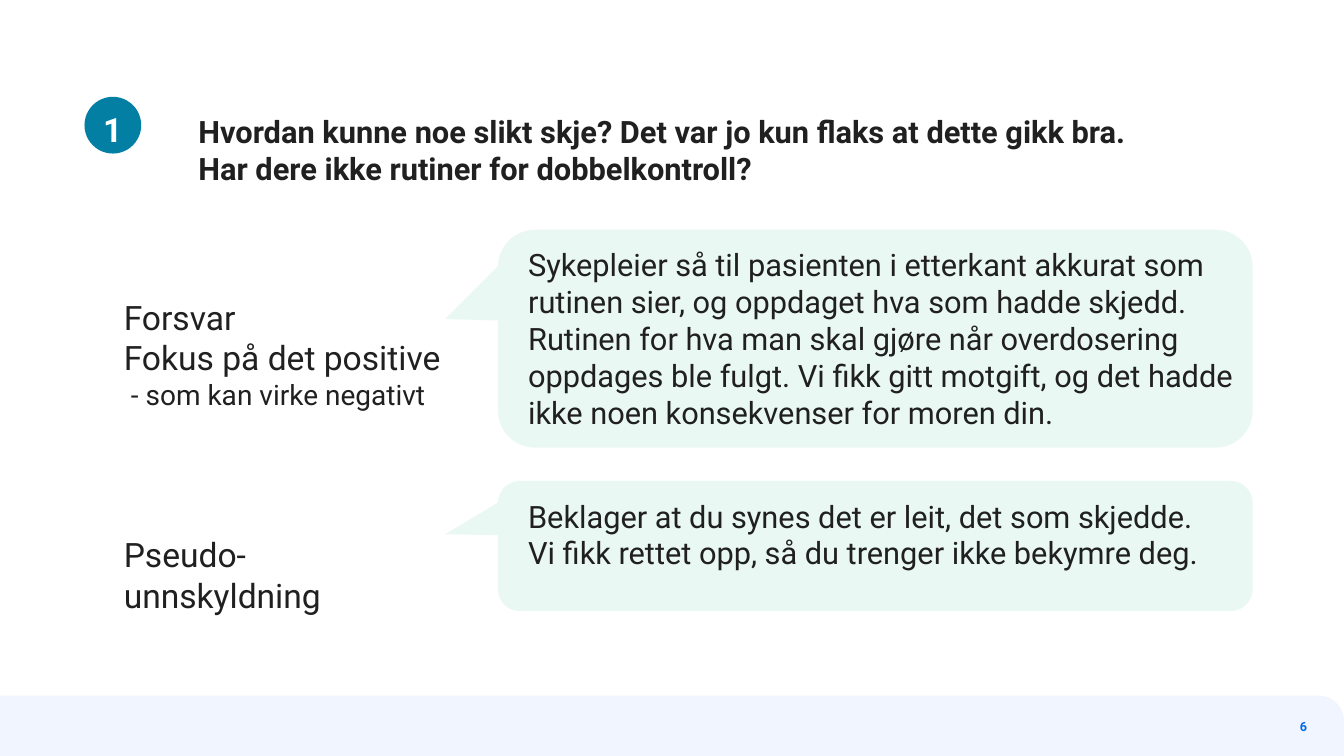
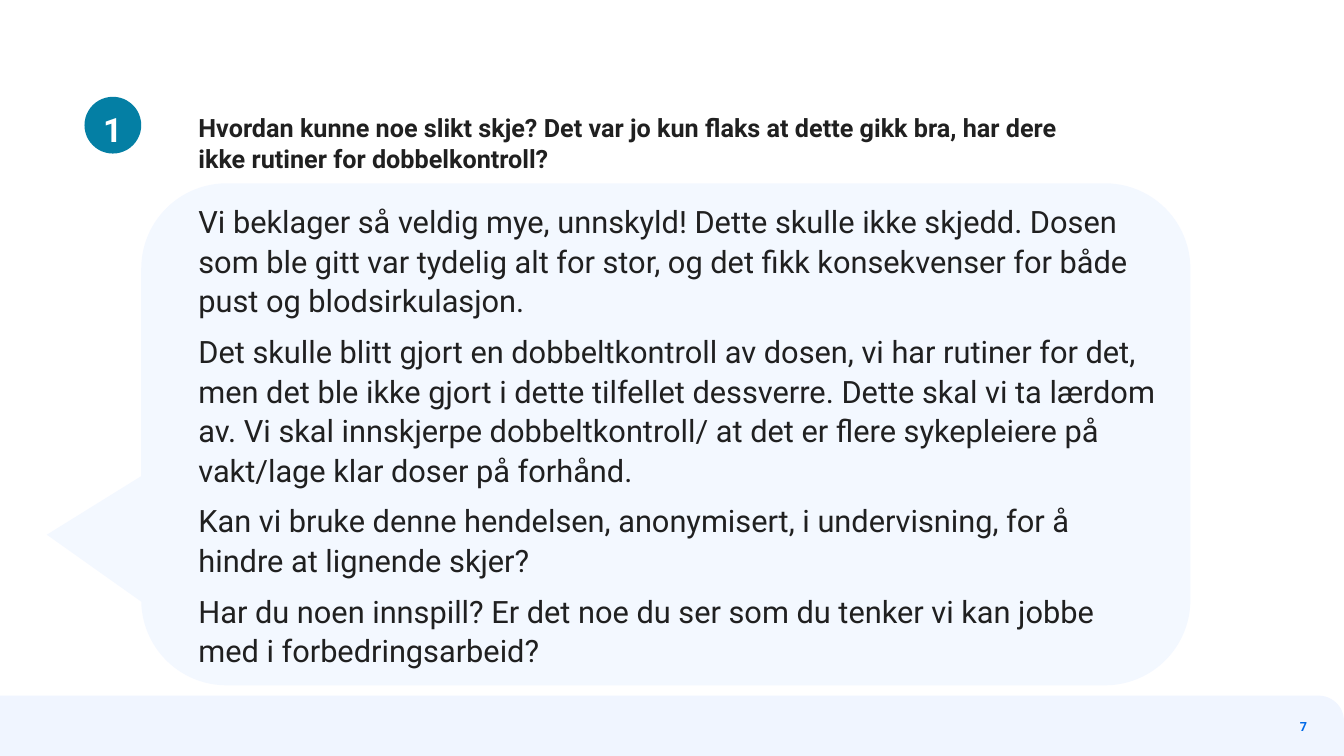
from dataclasses import dataclass

from pptx import Presentation, util as u
from pptx.dml.color import RGBColor
from pptx.enum import shapes, text


@dataclass(frozen=True)
class Theme:
    font: str = "Roboto"
    ink: str = "202020"
    white: str = "FFFFFF"
    accent: str = "0069E7"
    badge: str = "047FA4"
    band: str = "F0F5FF"
    mint: str = "EAF8F4"
    ice: str = "F3F8FF"
    label: int = 24
    speech: int = 22
    remark: int = 20
    small_title: int = 18
    page_number: int = 9


@dataclass(frozen=True)
class Area:
    """Position and size in centimetres."""
    left: float
    top: float
    width: float
    height: float

    def lengths(self) -> list[u.Cm]:
        return [u.Cm(v) for v in (self.left, self.top, self.width, self.height)]


@dataclass(frozen=True)
class Style:
    size: int
    color: str
    bold: bool = False
    align: text.PP_ALIGN = text.PP_ALIGN.LEFT
    line_spacing: float = 1.0
    space_after: int = 0


@dataclass(frozen=True)
class Exchange:
    """A way of answering and an example of it in a speech bubble."""
    label_top: float
    label: tuple[str, ...]
    remark: str
    bubble_top: float
    bubble_height: float
    speech: tuple[str, ...]


THEME = Theme()
WIDTH, HEIGHT = 33.87, 19.05
LABEL = Style(THEME.label, THEME.ink)
REMARK = Style(THEME.remark, THEME.ink)
SPEECH = Style(THEME.speech, THEME.ink)
ANSWER = Style(THEME.speech, THEME.ink, line_spacing=1.07, space_after=8)
BADGE = Style(THEME.label, THEME.white, True, text.PP_ALIGN.CENTER)
NUMBER = Style(THEME.page_number, THEME.accent, True, text.PP_ALIGN.RIGHT)

EXCHANGES = (
    Exchange(7.47, ("Forsvar", "Fokus på det positive"), "- som kan virke negativt",
             5.79, 5.49,
             ("Sykepleier så til pasienten i etterkant akkurat som rutinen sier, og "
              "oppdaget hva som hadde skjedd. Rutinen for hva man skal gjøre når "
              "overdosering oppdages ble fulgt. Vi fikk gitt motgift, og det hadde "
              "ikke noen konsekvenser for moren din.",)),
    Exchange(13.46, ("Pseudo-unnskyldning",), "", 12.12, 3.28,
             ("Beklager at du synes det er leit, det som skjedde.",
              "Vi fikk rettet opp, så du trenger ikke bekymre deg.")),
)

ANSWERS = (
    "Vi beklager så veldig mye, unnskyld! Dette skulle ikke skjedd. Dosen som ble gitt "
    "var tydelig alt for stor, og det fikk konsekvenser for både pust og "
    "blodsirkulasjon.",
    "Det skulle blitt gjort en dobbeltkontroll av dosen, vi har rutiner for det, men "
    "det ble ikke gjort i dette tilfellet dessverre. Dette skal vi ta lærdom av. Vi "
    "skal innskjerpe dobbeltkontroll/ at det er flere sykepleiere på vakt/lage klar "
    "doser på forhånd.",
    "Kan vi bruke denne hendelsen, anonymisert, i undervisning, for å hindre at "
    "lignende skjer?",
    "Har du noen innspill? Er det noe du ser som du tenker vi kan jobbe med i "
    "forbedringsarbeid?",
)


# Text
def format_para(para, style: Style, indent: float = 0) -> None:
    props = para._p.get_or_add_pPr()
    props.set("marL", str(u.Cm(indent)))
    props.set("indent", "0")
    para.alignment = style.align
    para.line_spacing = style.line_spacing
    para.space_before = u.Pt(0)
    para.space_after = u.Pt(style.space_after)
    for span in para.runs:
        span.font.name = THEME.font
        span.font.size = u.Pt(style.size)
        span.font.bold = style.bold
        span.font.color.rgb = RGBColor.from_string(style.color)


def write(frame, lines: tuple[str, ...], style: Style,
          anchor: text.MSO_ANCHOR = text.MSO_ANCHOR.TOP) -> None:
    frame.text = "\n".join(lines)
    frame.word_wrap = True
    frame.auto_size = text.MSO_AUTO_SIZE.NONE
    frame.vertical_anchor = anchor
    frame.margin_left = frame.margin_right = frame.margin_top = frame.margin_bottom = 0
    for para in frame.paragraphs:
        format_para(para, style)


def place(box, area: Area) -> None:
    box.left, box.top, box.width, box.height = area.lengths()


def add_text(page, area: Area, lines: tuple[str, ...], style: Style,
             anchor: text.MSO_ANCHOR = text.MSO_ANCHOR.TOP):
    box = page.shapes.add_textbox(*area.lengths())
    write(box.text_frame, lines, style, anchor)
    return box


# Shapes
def add_filled(page, kind: shapes.MSO_SHAPE, area: Area, color: str,
               adjustments: tuple[float, ...] = ()):
    box = page.shapes.add_shape(kind, *area.lengths())
    box.shadow.inherit = False
    box.fill.solid()
    box.fill.fore_color.rgb = RGBColor.from_string(color)
    box.line.fill.background()
    for index, value in enumerate(adjustments):
        box.adjustments[index] = value
    return box


def add_bubble(page, area: Area, color: str, tip: tuple[float, float]) -> None:
    bubble = add_filled(page, shapes.MSO_SHAPE.ROUNDED_RECTANGULAR_CALLOUT, area, color,
                        (*tip, 0.17))
    page.shapes.element.insert(2, bubble.element)  # behind the text


# Shared page parts
def add_page(deck, layout: int, number: int, title: str, size: int, title_width: float):
    page = deck.slides.add_slide(deck.slide_layouts[layout])
    place(page.shapes.title, Area(5, 2.84, title_width, 1.88))
    write(page.shapes.title.text_frame, (title,), Style(size, THEME.ink, True))
    badge = add_filled(page, shapes.MSO_SHAPE.FLOWCHART_CONNECTOR,
                       Area(2.13, 2.44, 1.43, 1.43), THEME.badge)
    write(badge.text_frame, ("1",), BADGE, text.MSO_ANCHOR.MIDDLE)
    badge.text_frame.margin_top = u.Cm(0.2)
    add_text(page, Area(28.93, 17.96, 4.01, 0.69), (str(number),), NUMBER,
             text.MSO_ANCHOR.MIDDLE)
    return page


def add_master_band(deck, page) -> None:
    band = add_filled(page, shapes.MSO_SHAPE.ROUND_1_RECTANGLE,
                      Area(0, 17.53, WIDTH, HEIGHT - 17.53), THEME.band, (0.42,))
    deck.slide_master.shapes.element.insert(2, band.element)


# Pages
def add_exchanges(page) -> None:
    for item in EXCHANGES:
        add_bubble(page, Area(12.55, item.bubble_top, 19.02, item.bubble_height),
                   THEME.mint, (-0.57, -0.09))
        add_text(page, Area(13.31, item.bubble_top + 0.41, 18.26, item.bubble_height - 0.5),
                 item.speech, SPEECH)
        label = add_text(page, Area(3.12, item.label_top, 8, 2.9), item.label, LABEL)
        if item.remark:
            para = label.text_frame.add_paragraph()
            para.text = item.remark
            format_para(para, REMARK, indent=0.18)


def add_answers(page) -> None:
    add_bubble(page, Area(3.56, 4.62, 26.44, 12.65), THEME.ice, (-0.59, 0.2))
    body = page.placeholders[1]
    place(body, Area(5, 5.05, 24.2, 12.2))
    write(body.text_frame, ANSWERS, ANSWER)
    for para in body.text_frame.paragraphs:
        props = para._p.get_or_add_pPr()
        bullet = props.makeelement(
            "{http://schemas.openxmlformats.org/drawingml/2006/main}buNone", {})
        props.append(bullet)


def main() -> None:
    deck = Presentation()
    deck.slide_width, deck.slide_height = u.Cm(WIDTH), u.Cm(HEIGHT)

    defence = add_page(deck, 5, 6, "Hvordan kunne noe slikt skje? Det var jo kun flaks at "
                       "dette gikk bra. Har dere ikke rutiner for dobbelkontroll?",
                       THEME.speech, 24.46)
    add_master_band(deck, defence)
    add_exchanges(defence)

    apology = add_page(deck, 1, 7, "Hvordan kunne noe slikt skje? Det var jo kun flaks at "
                       "dette gikk bra, har dere ikke rutiner for dobbelkontroll?",
                       THEME.small_title, 22.25)
    add_answers(apology)
    deck.save("out.pptx")


if __name__ == "__main__":
    main()
